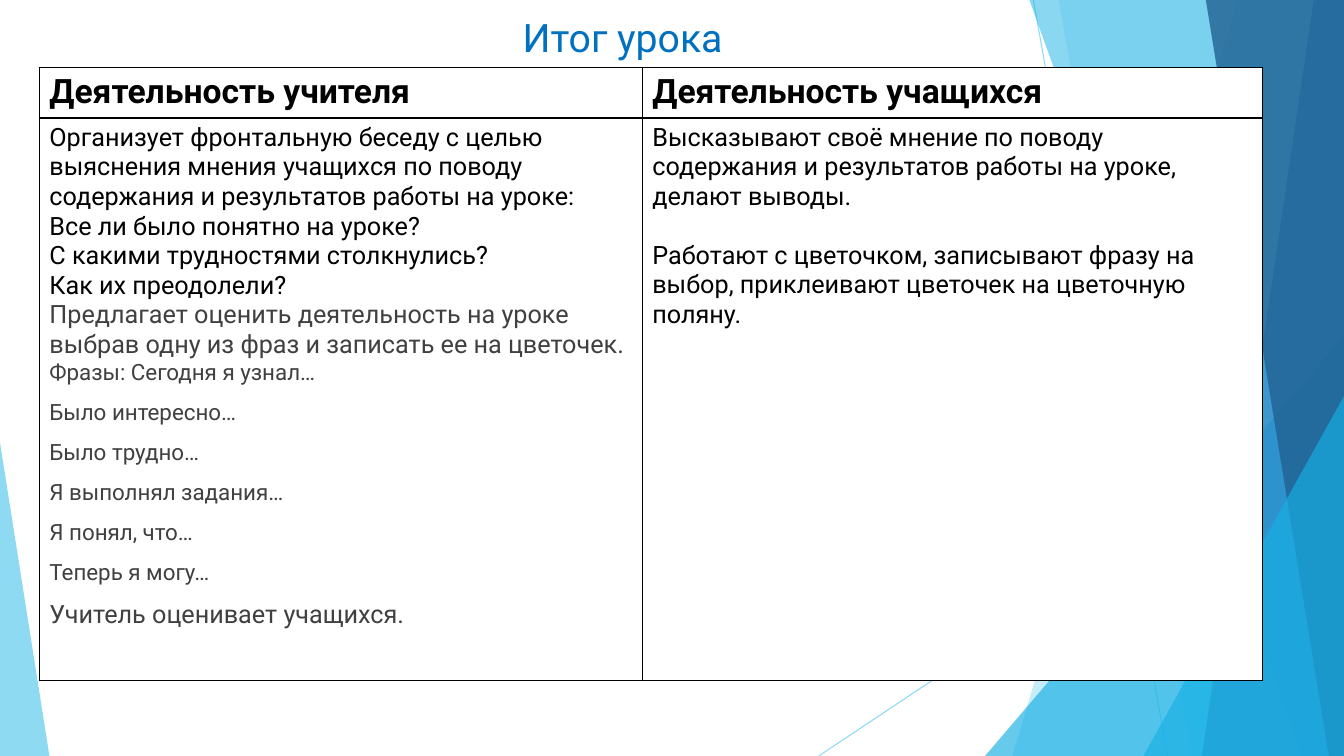
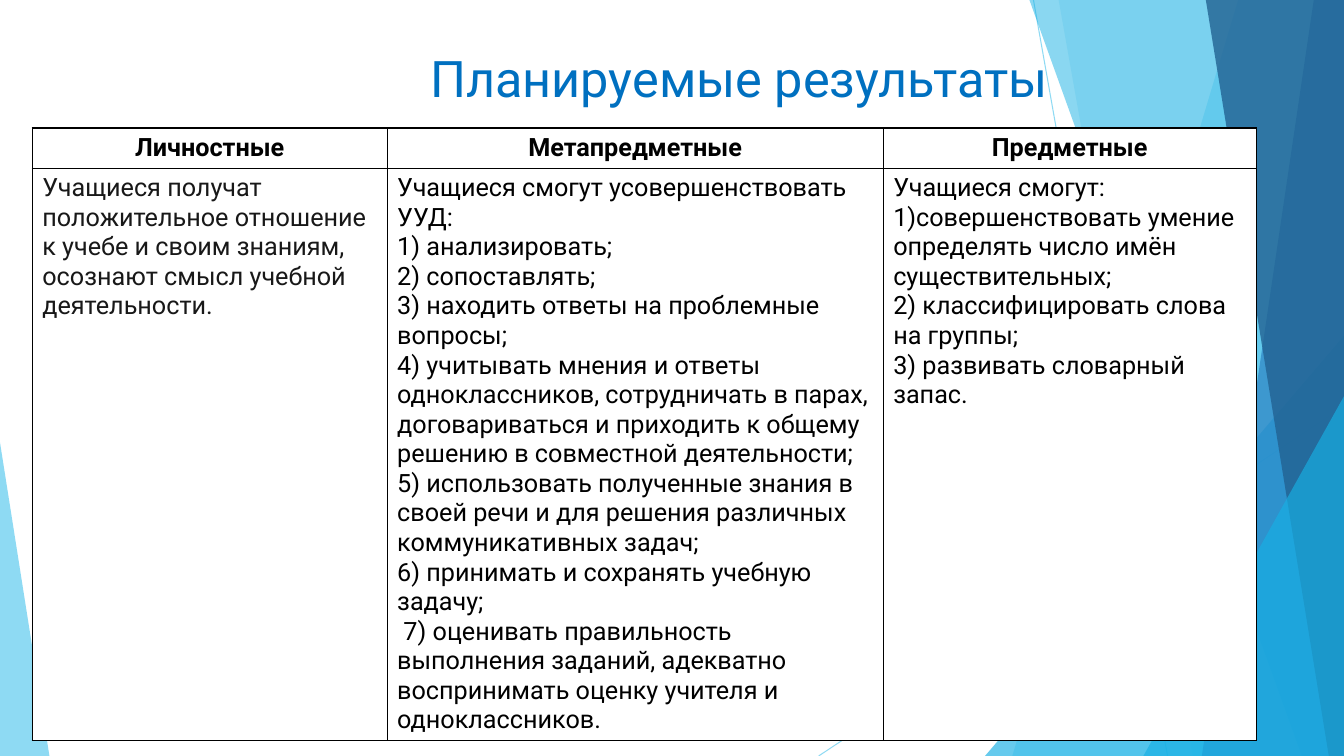
"""Builds two lesson-plan slides with tables over a shared faceted backdrop."""
from lxml import etree
from pptx import Presentation
from pptx.dml.color import RGBColor
from pptx.enum.shapes import MSO_CONNECTOR as Link, MSO_SHAPE as Form
from pptx.enum.text import MSO_ANCHOR as Anchor, MSO_AUTO_SIZE as Fit, PP_ALIGN as Align
from pptx.oxml.ns import qn
from pptx.util import Inches, Pt

FONT = "Roboto"
WIDE, HIGH = 13.33, 7.5
BLACK, GREY, WHITE = "000000", "404040", "FFFFFF"
SKY, AZURE, BLUE, NAVY = "5FCBEF", "17B0E4", "2E83C3", "226292"

RAYS = [((10.25, 0), (11.58, HIGH)), ((WIDE, 4.03), (8.12, HIGH))]
FACETS = [
    ("band", (12.28, 10.04), SKY, 36),
    ("band", (10.5, 11.83), SKY, 20),
    ("wedge", (9.77, 3.33, 3.56, 1), AZURE, 66),
    ("band", (10.21, 12.91), AZURE, 50),
    ("band", (13.03, 11.92), BLUE, 70),
    ("band", (11.96, 13.18), NAVY, 80),
    ("wedge", (11.34, 3.93, 1.99, 1), AZURE, 66),
    ("wedge", (0, 4.39, 0.49, 0), SKY, 70),
]

STYLES = {
    "head": dict(size=24, bold=True),
    "mid": dict(size=18, bold=True, align=Align.CENTER),
    "body": dict(),
    "gap": dict(before=21),
    "grey": dict(color=GREY),
    "dark": dict(color="181818"),
    "phrase": dict(size=16, color=GREY, align=Align.JUSTIFY, after=10),
    "last": dict(color=GREY, align=Align.JUSTIFY, after=10),
}

SLIDES = [
    dict(
        title="Итог урока", size=28, box=(0.8, 0.08, 10.75, 1.08),
        at=(0.39, 0.67), cols=[5.98, 6.15], rows=[0.5, 5.58],
        cells=[
            [[("head", ["Деятельность учителя"])], [("head", ["Деятельность учащихся"])]],
            [
                [
                    ("body", [
                        "Организует фронтальную беседу с целью выяснения мнения учащихся по поводу содержания и результатов работы на уроке:",
                        "Все ли было понятно на уроке?",
                        "С какими трудностями столкнулись?",
                        "Как их преодолели?",
                    ]),
                    ("grey", ["Предлагает оценить деятельность на уроке выбрав одну из фраз и записать ее на цветочек."]),
                    ("phrase", [
                        "Фразы: Сегодня я узнал…",
                        "Было интересно…",
                        "Было трудно…",
                        "Я выполнял задания…",
                        "Я понял, что…",
                        "Теперь я могу…",
                    ]),
                    ("last", ["Учитель оценивает учащихся."]),
                ],
                [
                    ("body", ["Высказывают своё мнение по поводу содержания и результатов работы на уроке, делают выводы."]),
                    ("gap", ["Работают с цветочком, записывают фразу на выбор, приклеивают цветочек на цветочную поляну."]),
                ],
            ],
        ],
    ),
    dict(
        title="Планируемые результаты", size=36, box=(2.63, 0.42, 9.4, 1.44),
        at=(0.32, 1.27), cols=[3.52, 4.92, 3.7], rows=[0.4, 5.67],
        cells=[
            [[("mid", ["Личностные"])], [("mid", ["Метапредметные"])], [("mid", ["Предметные"])]],
            [
                [("dark", ["Учащиеся получат положительное отношение к учебе и своим знаниям, осознают смысл учебной деятельности."])],
                [("body", [
                    "Учащиеся смогут усовершенствовать УУД:",
                    "1) анализировать;",
                    "2) сопоставлять;",
                    "3) находить ответы на проблемные вопросы;",
                    "4) учитывать мнения и ответы одноклассников, сотрудничать в парах, договариваться и приходить к общему решению в совместной деятельности;",
                    "5) использовать полученные знания в своей речи и для решения различных коммуникативных задач;",
                    "6) принимать и сохранять учебную задачу;",
                    " 7) оценивать правильность выполнения заданий, адекватно воспринимать оценку учителя и одноклассников.",
                ])],
                [("body", [
                    "Учащиеся смогут:",
                    "1)совершенствовать умение определять число имён существительных;",
                    "2) классифицировать слова на группы;",
                    "3) развивать словарный запас.",
                ])],
            ],
        ],
    ),
]


def paint(fill, color):
    """Give a fill or line fill one solid colour."""
    fill.solid()
    fill.fore_color.rgb = RGBColor.from_string(color)


def fade(shape, share):
    """Set the opacity of a shape's colours in percent."""
    for node in shape.element.spPr.iter(qn("a:srgbClr")):
        etree.SubElement(node, qn("a:alpha")).set("val", str(share * 1000))


def style(para, size=18, color=BLACK, bold=False, align=Align.LEFT, before=0, after=0):
    """Format one whole paragraph."""
    para.alignment = align
    para.space_before, para.space_after = Pt(before), Pt(after)
    font = para.font
    font.name, font.size, font.bold = FONT, Pt(size), bold
    font.color.rgb = RGBColor.from_string(color)


def add_ray(shapes, start, end):
    """Draw one thin translucent line."""
    ray = shapes.add_connector(Link.STRAIGHT, *map(Inches, start + end))
    paint(ray.line.fill, SKY)
    ray.line.width = Pt(0.75)
    fade(ray, 70)
    etree.SubElement(ray.element.spPr, qn("a:effectLst"))
    return ray


def add_facet(shapes, kind, place, color, share):
    """Draw a band up to the right edge, or a wedge down to the bottom."""
    if kind == "band":
        top, low = place
        points = [(top, 0), (WIDE, 0), (WIDE, HIGH), (low, HIGH)]
        path = [(Inches(x), Inches(y)) for x, y in points]
        pen = shapes.build_freeform(*path[0])
        pen.add_line_segments(path[1:], close=True)
        facet = pen.convert_to_shape()
    else:
        left, top, width, tip = place
        facet = shapes.add_shape(Form.ISOSCELES_TRIANGLE, *map(Inches, (left, top, width, HIGH - top)))
        facet.adjustments[0] = tip
    paint(facet.fill, color)
    facet.line.fill.background()
    facet.shadow.inherit = False
    fade(facet, share)
    return facet


def add_backdrop(slide, layout):
    """Draw the backdrop once and hand it to the layout."""
    for holder in list(layout.placeholders)[1:]:
        layout.shapes.element.remove(holder.element)
    parts = [add_ray(slide.shapes, *ray) for ray in RAYS]
    parts += [add_facet(slide.shapes, *facet) for facet in FACETS]
    for part in parts:
        layout.shapes.element.append(part.element)


def set_title(slide, data):
    """Place and format the title."""
    title = slide.shapes.title
    title.left, title.top, title.width, title.height = map(Inches, data["box"])
    frame = title.text_frame
    frame.text = data["title"]
    frame.auto_size, frame.vertical_anchor = Fit.NONE, Anchor.TOP
    style(frame.paragraphs[0], data["size"], "0070C0", align=Align.CENTER)


def set_border(cell):
    """Rule all four sides of a cell in black."""
    props = cell._tc.get_or_add_tcPr()
    for place, side in enumerate("LRTB"):
        line = etree.Element(qn("a:ln" + side), w=str(Pt(1)))
        fill = etree.SubElement(line, qn("a:solidFill"))
        etree.SubElement(fill, qn("a:srgbClr"), val=BLACK)
        props.insert(place, line)


def fill_cell(cell, groups):
    """Write styled paragraphs into a white ruled cell."""
    paint(cell.fill, WHITE)
    set_border(cell)
    lines = [(name, text) for name, texts in groups for text in texts]
    frame = cell.text_frame
    frame.text = "\n".join(text for _, text in lines)
    for para, (name, _) in zip(frame.paragraphs, lines):
        style(para, **STYLES[name])


def add_grid(slide, data):
    """Add the table with its sizes and text."""
    cols, rows = data["cols"], data["rows"]
    size = data["at"] + (sum(cols), sum(rows))
    table = slide.shapes.add_table(len(rows), len(cols), *map(Inches, size)).table
    table.first_row = table.horz_banding = False
    for col, width in zip(table.columns, cols):
        col.width = Inches(width)
    for row, height, cells in zip(table.rows, rows, data["cells"]):
        row.height = Inches(height)
        for cell, groups in zip(row.cells, cells):
            fill_cell(cell, groups)


def main():
    """Build and save the deck."""
    deck = Presentation()
    deck.slide_width, deck.slide_height = Inches(WIDE), Inches(HIGH)
    layout = deck.slide_layouts[5]
    for data in SLIDES:
        slide = deck.slides.add_slide(layout)
        if data is SLIDES[0]:
            add_backdrop(slide, layout)
        set_title(slide, data)
        add_grid(slide, data)
    deck.save("out.pptx")


if __name__ == "__main__":
    main()
